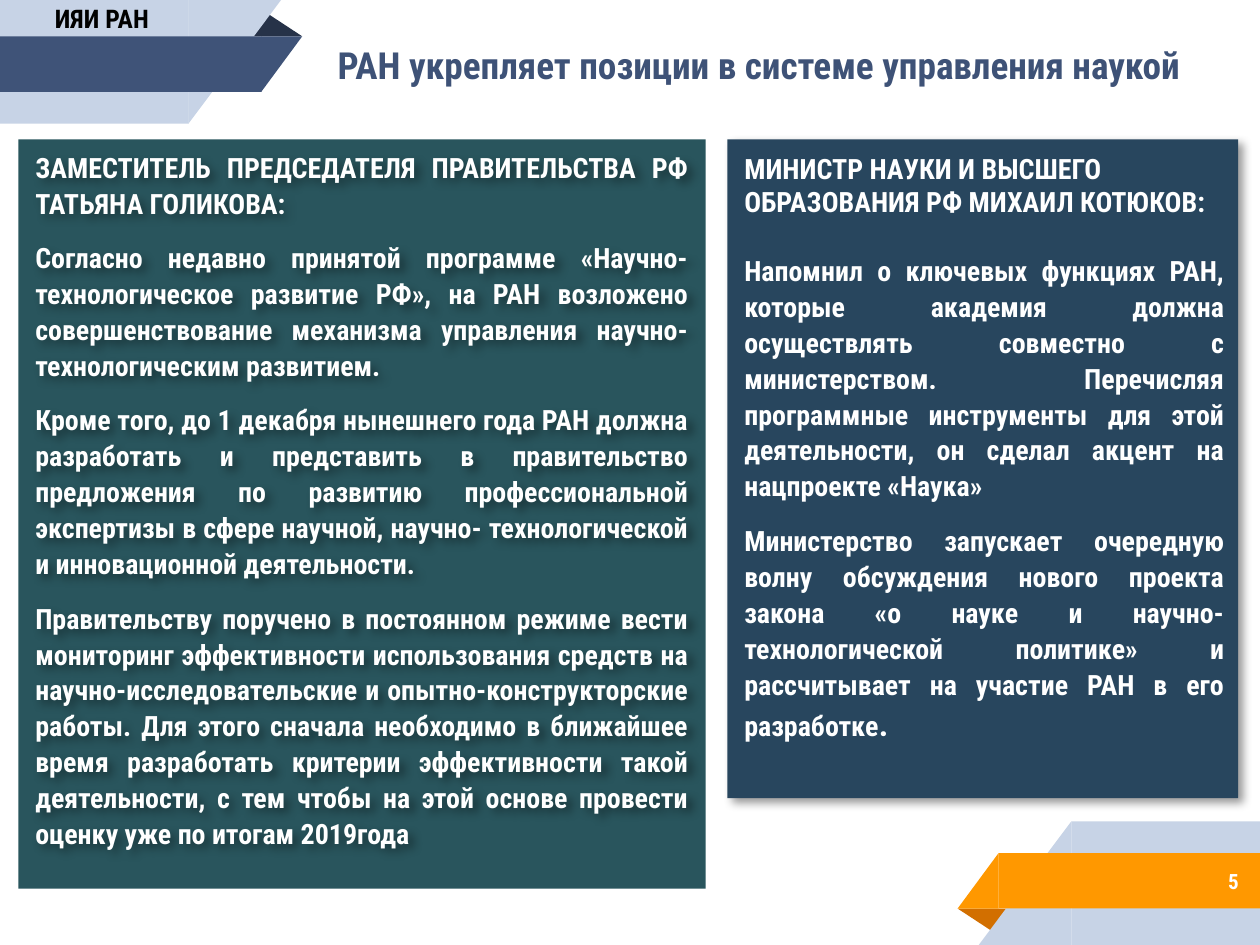
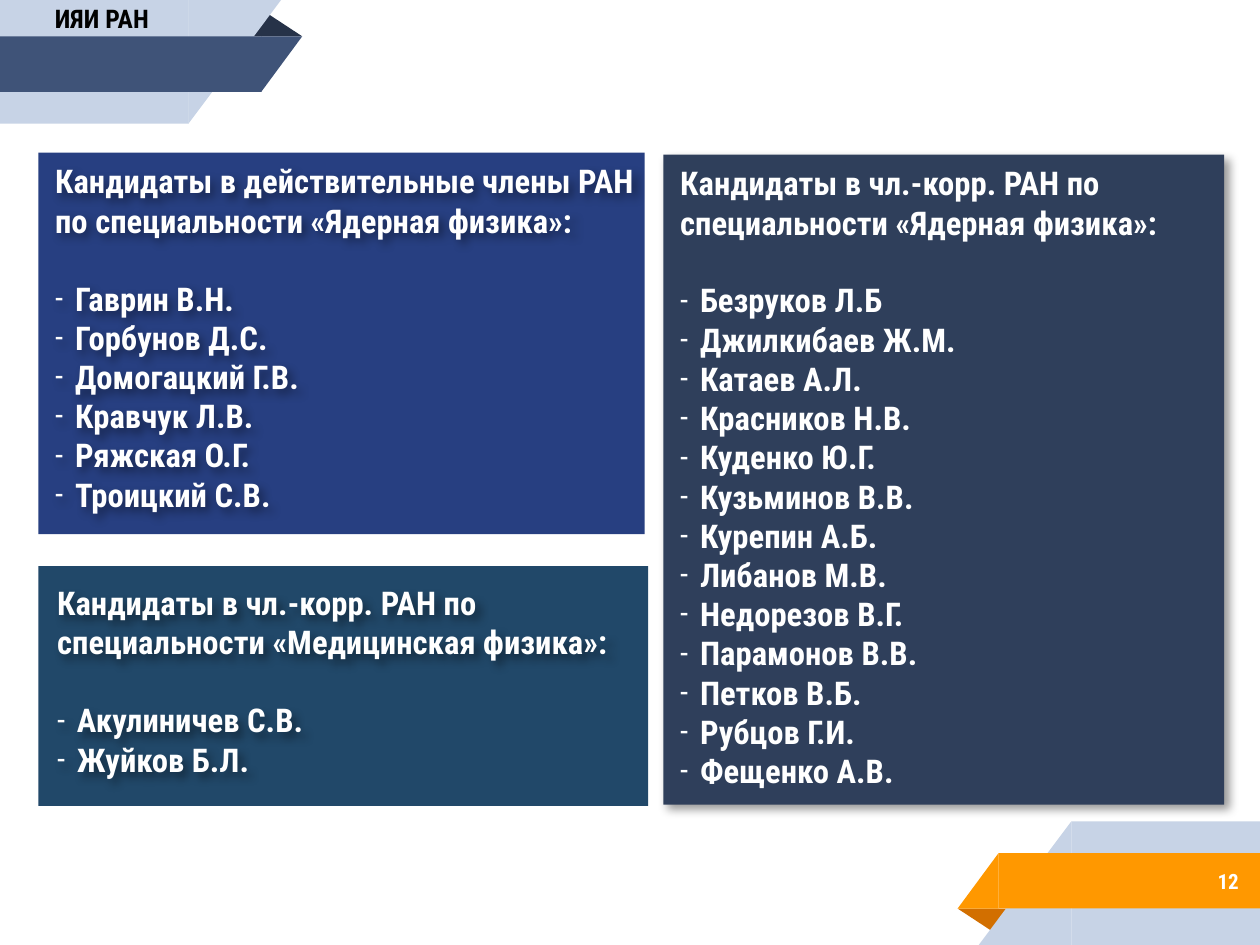
"""Builds two slides on academy policy and candidates."""
from dataclasses import dataclass

from lxml import etree
from pptx import Presentation
from pptx import util as u
from pptx.dml.color import RGBColor
from pptx.enum import shapes, text
from pptx.oxml.ns import qn

FONT = "Roboto Condensed"
WHITE, BLACK, TITLE = "FFFFFF", "000000", "3E5277"
PALE, NAVY, DARK_NAVY, ORANGE, DARK_ORANGE = "C7D3E6", "3F5378", "263248", "FF9800", "D26F00"
PAGE_WIDTH, PAGE_HEIGHT = 19.05, 14.29
LEFT, JUSTIFY, RIGHT = text.PP_ALIGN.LEFT, text.PP_ALIGN.JUSTIFY, text.PP_ALIGN.RIGHT
RECTANGLE = shapes.MSO_SHAPE.RECTANGLE
CORNER = shapes.MSO_SHAPE.RIGHT_TRIANGLE
FOLD = shapes.MSO_SHAPE.ISOSCELES_TRIANGLE


@dataclass(frozen=True)
class Area:
    left: float
    top: float
    width: float
    height: float

    def lengths(self) -> list:
        return [u.Cm(value) for value in (self.left, self.top, self.width, self.height)]

    def turned(self) -> "Area":
        return Area(PAGE_WIDTH - self.left - self.width,
                    PAGE_HEIGHT - self.top - self.height, self.width, self.height)


@dataclass(frozen=True)
class RibbonPart:
    kind: shapes.MSO_SHAPE
    area: Area
    bottom_color: str
    top_color: str


@dataclass(frozen=True)
class Line:
    words: str
    size: float = 12
    align: text.PP_ALIGN = JUSTIFY
    spacing: float = 1.07
    after: float = 8
    color: str = WHITE
    bullet: bool = False
    large_end: str = ""


@dataclass(frozen=True)
class Panel:
    area: Area
    text_area: Area
    color: str
    lines: list
    raised: bool = False


RIBBON = [
    RibbonPart(FOLD, Area(14.48, 13.74, 0.81, 0.36), DARK_ORANGE, DARK_NAVY),
    RibbonPart(RECTANGLE, Area(16.2, 12.42, 2.85, 1.87), PALE, PALE),
    RibbonPart(CORNER, Area(14.8, 12.42, 1.4, 1.87), PALE, PALE),
    RibbonPart(RECTANGLE, Area(15.1, 12.9, 3.95, 0.84), ORANGE, NAVY),
    RibbonPart(CORNER, Area(14.48, 12.9, 0.62, 0.84), ORANGE, NAVY),
]


def rgb(value: str) -> RGBColor:
    return RGBColor.from_string(value)


def add_filled(page, kind: shapes.MSO_SHAPE, area: Area, color: str):
    shape = page.shapes.add_shape(kind, *area.lengths())
    shape.shadow.inherit = False
    shape.fill.solid()
    shape.fill.fore_color.rgb = rgb(color)
    shape.line.fill.background()
    return shape


def add_shadow(shape) -> None:
    shape.shadow.inherit = False
    effects = shape.element.spPr.find(qn("a:effectLst"))
    shadow = etree.SubElement(effects, qn("a:outerShdw"), blurRad=str(u.Pt(4)),
                              dist=str(u.Pt(3)), dir="2700000", algn="tl", rotWithShape="0")
    color = etree.SubElement(shadow, qn("a:srgbClr"), val=BLACK)
    etree.SubElement(color, qn("a:alpha"), val="40000")


def set_bullet(para, shown: bool) -> None:
    props = para._p.get_or_add_pPr()
    indent = u.Cm(0.3) if shown else 0
    props.set("marL", str(indent))
    props.set("indent", str(-indent))
    if shown:
        etree.SubElement(props, qn("a:buFont"), typeface=FONT)
        etree.SubElement(props, qn("a:buChar"), char="-")
    else:
        etree.SubElement(props, qn("a:buNone"))


def add_span(para, words: str, size: float, color: str) -> None:
    span = para.add_run()
    span.text = words
    span.font.name = FONT
    span.font.size = u.Pt(size)
    span.font.bold = True
    span.font.color.rgb = rgb(color)


def write(box, lines: list, anchor=text.MSO_ANCHOR.TOP) -> None:
    frame = box.text_frame
    frame.word_wrap = True
    frame.auto_size = text.MSO_AUTO_SIZE.NONE
    frame.vertical_anchor = anchor
    for index, line in enumerate(lines):
        para = frame.add_paragraph() if index else frame.paragraphs[0]
        set_bullet(para, line.bullet)
        para.alignment = line.align
        para.line_spacing = line.spacing
        para.space_before = u.Pt(0)
        para.space_after = u.Pt(line.after)
        add_span(para, line.words, line.size, line.color)
        if line.large_end:
            add_span(para, line.large_end, line.size + 2, line.color)


def place(box, area: Area) -> None:
    box.left, box.top, box.width, box.height = area.lengths()


def add_ribbons(page) -> None:
    for at_top in (False, True):
        for part in RIBBON:
            area = part.area.turned() if at_top else part.area
            shape = add_filled(page, part.kind, area,
                               part.top_color if at_top else part.bottom_color)
            if part.kind == FOLD:
                shape.adjustments[0] = 0.324
            if part.kind == CORNER:
                shape.element.spPr.xfrm.set("flipH", "1")
            shape.rotation = 180 if at_top != (part.kind == FOLD) else 0


def add_label(page, area: Area, line: Line):
    box = page.shapes.add_textbox(*area.lengths())
    write(box, [line], text.MSO_ANCHOR.MIDDLE)
    return box


def add_panel(page, panel: Panel, box) -> None:
    back = add_filled(page, RECTANGLE, panel.area, panel.color)
    back.element.addnext(box.element)
    place(box, panel.text_area)
    write(box, panel.lines)
    add_shadow(back if panel.raised else box)


def add_page(deck, number: int, panels: list, title: str = "") -> None:
    page = deck.slides.add_slide(deck.slide_layouts.get_by_name("Comparison"))
    heading, *bodies = list(page.placeholders)
    add_ribbons(page)
    label = Line(str(number), 9, RIGHT, 1, 0)
    corner = add_label(page, Area(15.88, 12.88, 3.1, 0.89), label)
    corner.text_frame.margin_right = u.Cm(0.25)
    add_label(page, Area(0.58, -0.1, 2.44, 0.74), Line("ИЯИ РАН", 11, LEFT, 1, 0, BLACK))
    if title:
        place(heading, Area(4.85, 0.46, 13.44, 0.94))
        write(heading, [Line(title, 16, color=TITLE)])
    else:
        heading.element.getparent().remove(heading.element)
    for panel, box in zip(panels, bodies):
        add_panel(page, panel, box)
    for box in bodies[len(panels):]:
        box.element.getparent().remove(box.element)


def candidates(heading: str, names: list) -> list:
    return [Line(heading, 14, LEFT, 1, 16.6)] + [
        Line(name, 14, LEFT, 1, 0, bullet=True) for name in names]


STATEMENTS = [
    Panel(Area(0.28, 2.11, 10.39, 11.33), Area(0.28, 2.11, 10.39, 11.33), "29555D", [
        Line("ЗАМЕСТИТЕЛЬ ПРЕДСЕДАТЕЛЯ ПРАВИТЕЛЬСТВА РФ ТАТЬЯНА ГОЛИКОВА:"),
        Line("Согласно недавно принятой программе «Научно- технологическое развитие РФ», "
             "на РАН возложено совершенствование механизма управления "
             "научно-технологическим развитием."),
        Line("Кроме того, до 1 декабря нынешнего года РАН должна разработать и представить "
             "в правительство предложения по развитию профессиональной экспертизы в сфере "
             "научной, научно- технологической и инновационной деятельности."),
        Line("Правительству поручено в постоянном режиме вести мониторинг эффективности "
             "использования средств на научно-исследовательские и опытно-конструкторские "
             "работы. Для этого сначала необходимо в ближайшее время разработать критерии "
             "эффективности такой деятельности, с тем чтобы на этой основе провести оценку "
             "уже по итогам 2019года"),
    ]),
    Panel(Area(11, 2.11, 7.72, 9.96), Area(11, 2.16, 7.77, 9.27), "28465E", [
        Line("МИНИСТР НАУКИ И ВЫСШЕГО ОБРАЗОВАНИЯ РФ МИХАИЛ КОТЮКОВ:", 12, LEFT, 1, 14),
        Line("Напомнил о ключевых функциях РАН, которые академия должна осуществлять "
             "совместно с министерством. Перечисляя программные инструменты для этой "
             "деятельности, он сделал акцент на нацпроекте «Наука»"),
        Line("Министерство запускает очередную волну обсуждения нового проекта закона "
             "«о науке и научно- технологической политике» и рассчитывает на участие РАН "
             "в его разработке", large_end="."),
    ], raised=True),
]

CANDIDATES = [
    Panel(Area(0.58, 2.31, 9.17, 5.77), Area(0.58, 2.31, 9.35, 5.77), "273F81", candidates(
        "Кандидаты в действительные члены РАН по специальности «Ядерная физика»:",
        ["Гаврин В.Н.", "Горбунов Д.С.", "Домогацкий Г.В.", "Кравчук Л.В.",
         "Ряжская О.Г.", "Троицкий С.В."])),
    Panel(Area(10.03, 2.34, 8.48, 9.83), Area(10.03, 2.34, 8.48, 9.83), "2F3F5B", candidates(
        "Кандидаты в чл.-корр. РАН по специальности «Ядерная физика»:",
        ["Безруков Л.Б", "Джилкибаев Ж.М.", "Катаев А.Л.", "Красников Н.В.", "Куденко Ю.Г.",
         "Кузьминов В.В.", "Курепин А.Б.", "Либанов М.В.", "Недорезов В.Г.",
         "Парамонов В.В.", "Петков В.Б.", "Рубцов Г.И.", "Фещенко А.В."]), raised=True),
    Panel(Area(0.58, 8.56, 9.22, 3.63), Area(0.61, 8.69, 9.6, 3.5), "214869", candidates(
        "Кандидаты в чл.-корр. РАН по специальности «Медицинская физика»:",
        ["Акулиничев С.В.", "Жуйков Б.Л."])),
]


def main() -> None:
    deck = Presentation()
    deck.slide_width, deck.slide_height = u.Cm(PAGE_WIDTH), u.Cm(PAGE_HEIGHT)
    add_page(deck, 5, STATEMENTS, "РАН укрепляет позиции в системе управления наукой")
    add_page(deck, 12, CANDIDATES)
    deck.save("out.pptx")


if __name__ == "__main__":
    main()
